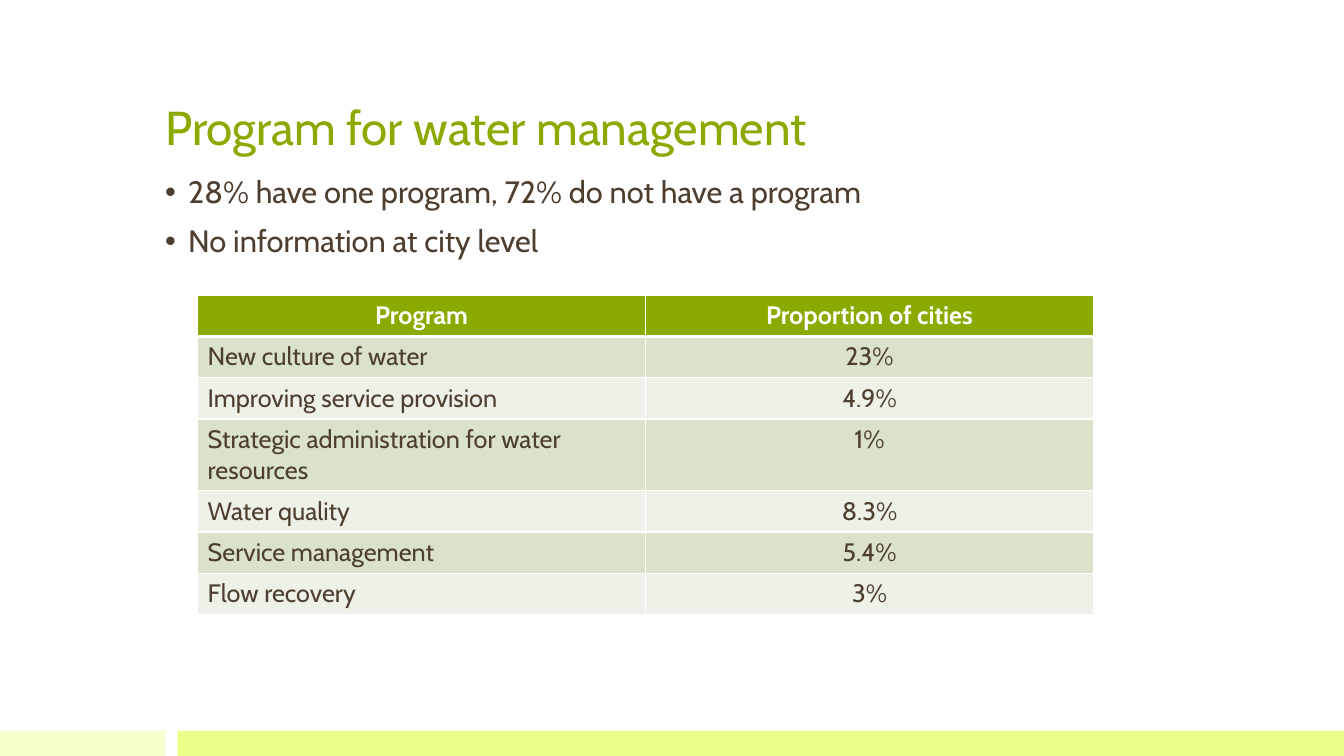
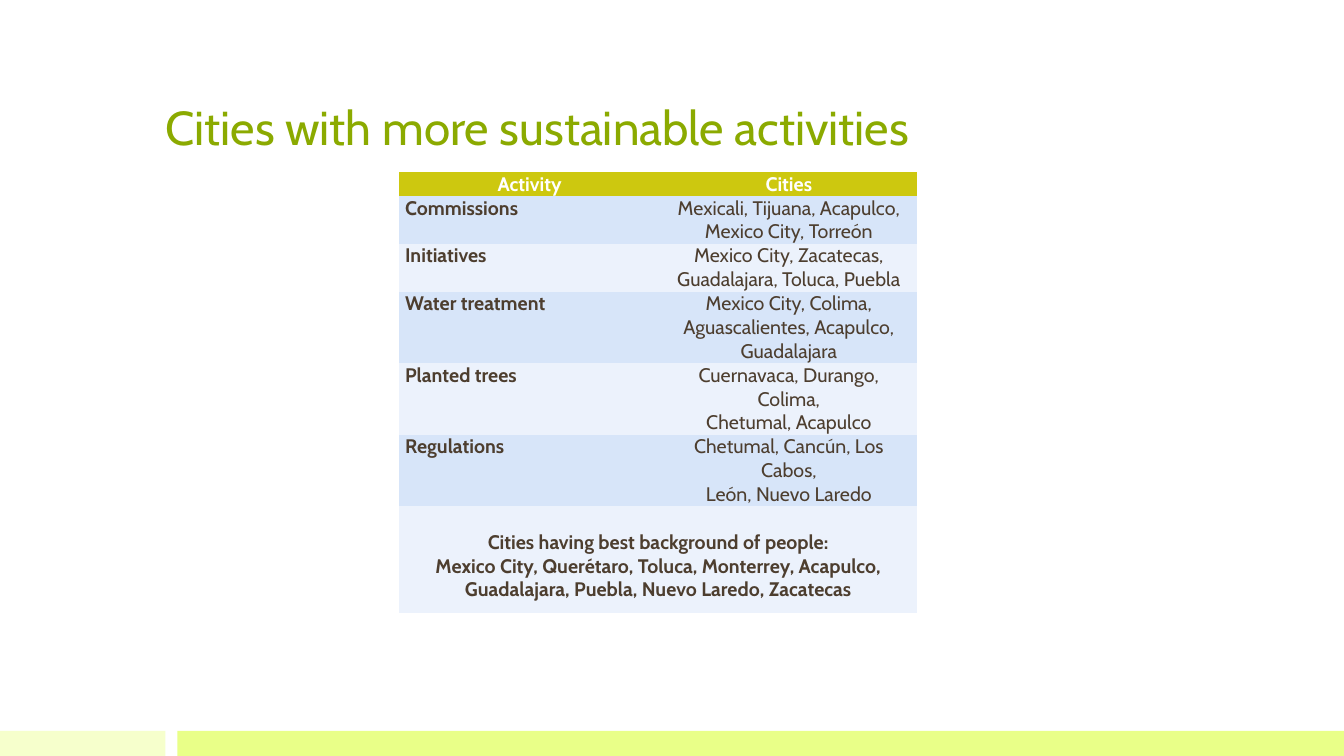
"""Build two slides on water programs and sustainable activities in cities."""
from lxml.etree import SubElement
from pptx import Presentation
from pptx.dml.color import RGBColor
from pptx.enum.shapes import MSO_SHAPE as Shape
from pptx.enum.text import MSO_ANCHOR as Anchor, PP_ALIGN as Align
from pptx.oxml.ns import qn
from pptx.util import Cm, Pt

PROGRAM_TITLE = "Program for water management"
PROGRAM_POINTS = [
    "28% have one program, 72% do not have a program",
    "No information at city level",
]
PROGRAMS = [
    ("Program", "Proportion of cities"),
    ("New culture of water", "23%"),
    ("Improving service provision", "4.9%"),
    ("Strategic administration for water resources", "1%"),
    ("Water quality", "8.3%"),
    ("Service management", "5.4%"),
    ("Flow recovery", "3%"),
]
ACTIVITY_TITLE = "Cities with more sustainable activities"
ACTIVITIES = [
    ("Activity", "Cities"),
    ("Commissions", "Mexicali, Tijuana, Acapulco, Mexico City, Torreón"),
    ("Initiatives", "Mexico City, Zacatecas, Guadalajara, Toluca, Puebla"),
    ("Water treatment", "Mexico City, Colima, Aguascalientes, Acapulco, Guadalajara"),
    ("Planted trees", "Cuernavaca, Durango, Colima,\nChetumal, Acapulco"),
    ("Regulations", "Chetumal, Cancún, Los Cabos,\nLeón, Nuevo Laredo"),
    (
        "Cities having best background of people:\n"
        "Mexico City, Querétaro, Toluca, Monterrey, Acapulco, "
        "Guadalajara, Puebla, Nuevo Laredo, Zacatecas",
    ),
]

FONT = "Cabin"
WHITE = RGBColor(0xFF, 0xFF, 0xFF)
GREEN = RGBColor(0x8B, 0xAA, 0x00)
BROWN = RGBColor(0x4D, 0x3E, 0x2F)
OLIVE = RGBColor(0xCD, 0xC8, 0x0F)
GREEN_BANDS = (RGBColor(0xDA, 0xE2, 0xCC), RGBColor(0xEE, 0xF1, 0xE7))
BLUE_BANDS = (RGBColor(0xD7, 0xE5, 0xF9), RGBColor(0xEC, 0xF2, 0xFC))
FOOTER_BANDS = [
    (0, 4.17, RGBColor(0xF6, 0xFF, 0xCC)),
    (4.47, 29.4, RGBColor(0xE9, 0xFF, 0x88)),
]

SLIDE_WIDTH, SLIDE_HEIGHT = 33.87, 19.05
FOOTER_HEIGHT = 0.63
TEXT_LEFT, TEXT_WIDTH = 3.91, 26.04
TITLE_TOP, TITLE_HEIGHT = 0.76, 3.28
CONTENT_TOP, CONTENT_HEIGHT = 4.34, 12.83
BULLET_INDENT = 0.58
TITLE_ONLY, TITLE_AND_CONTENT = 5, 1


def place(part, left, top, width, height):
    part.left, part.top = Cm(left), Cm(top)
    part.width, part.height = Cm(width), Cm(height)


def style(paragraph, size, color, bold=False, align=Align.LEFT):
    paragraph.alignment = align
    font = paragraph.font
    font.name, font.size, font.bold = FONT, Pt(size), bold
    font.color.rgb = color


def add_slide(deck, layout, heading):
    slide = deck.slides.add_slide(deck.slide_layouts[layout])
    for left, width, color in FOOTER_BANDS:
        band = slide.shapes.add_shape(
            Shape.RECTANGLE, Cm(left), Cm(SLIDE_HEIGHT - FOOTER_HEIGHT),
            Cm(width), Cm(FOOTER_HEIGHT))
        band.shadow.inherit = False
        band.fill.solid()
        band.fill.fore_color.rgb = color
        band.line.fill.background()
    title = slide.shapes.title
    place(title, TEXT_LEFT, TITLE_TOP, TEXT_WIDTH, TITLE_HEIGHT)
    title.text_frame.text = heading
    title.text_frame.vertical_anchor = Anchor.BOTTOM
    style(title.text_frame.paragraphs[0], 34, GREEN)
    return slide


def fill_bullets(body, points):
    place(body, TEXT_LEFT, CONTENT_TOP, TEXT_WIDTH, CONTENT_HEIGHT)
    body.text_frame.text = "\n".join(points)
    for paragraph in body.text_frame.paragraphs:
        style(paragraph, 22, BROWN)
        paragraph.line_spacing = 0.9
        paragraph.space_before = Pt(11)
        properties = paragraph._p.get_or_add_pPr()
        properties.set("marL", str(Cm(BULLET_INDENT)))
        properties.set("indent", str(-Cm(BULLET_INDENT)))


def set_borders(cell, widths):
    properties = cell._tc.get_or_add_tcPr()
    for side, width in zip("LRTB", widths):
        border = SubElement(properties, qn(f"a:ln{side}"), w=str(Pt(width)))
        if width:
            paint = SubElement(border, qn("a:solidFill"))
            SubElement(paint, qn("a:srgbClr"), val=str(WHITE))
        else:
            SubElement(border, qn("a:noFill"))


def add_grid(slide, rows, left, top, widths, heights, size, head, bands,
             rule=0, head_rule=0, bold_labels=False, margins=None):
    table = slide.shapes.add_table(
        len(rows), len(widths), Cm(left), Cm(top),
        Cm(sum(widths)), Cm(sum(heights))).table
    for column, width in zip(table.columns, widths):
        column.width = Cm(width)
    for r, (texts, height) in enumerate(zip(rows, heights)):
        table.rows[r].height = Cm(height)
        spans = len(texts) < len(widths)
        if spans:
            table.cell(r, 0).merge(table.cell(r, len(widths) - 1))
        for c, text in enumerate(texts):
            cell = table.cell(r, c)
            above = head_rule if r == 1 else rule
            below = head_rule if r == 0 else rule
            set_borders(cell, (rule, rule, above, below))
            cell.fill.solid()
            cell.fill.fore_color.rgb = bands[(r - 1) % 2] if r else head
            if margins:
                side, edge = margins
                cell.margin_left = cell.margin_right = Cm(side)
                cell.margin_top = cell.margin_bottom = Cm(edge)
            cell.text = text
            label = c == 0 and r > 0
            for paragraph in cell.text_frame.paragraphs:
                style(paragraph, size, BROWN if r else WHITE,
                      bold=r == 0 or (label and bold_labels),
                      align=Align.LEFT if label and not spans else Align.CENTER)
    return table


def main():
    deck = Presentation()
    deck.slide_width, deck.slide_height = Cm(SLIDE_WIDTH), Cm(SLIDE_HEIGHT)

    programs = add_slide(deck, TITLE_AND_CONTENT, PROGRAM_TITLE)
    fill_bullets(programs.placeholders[1], PROGRAM_POINTS)
    add_grid(programs, PROGRAMS, 4.98, 7.44, (11.29, 11.29),
             [1.04] * 3 + [1.8] + [1.04] * 3, 18, GREEN, GREEN_BANDS,
             rule=1, head_rule=3)

    activities = add_slide(deck, TITLE_ONLY, ACTIVITY_TITLE)
    line = 0.6
    line_counts = (1, 2, 2, 3, 3, 3, 4.5)
    grid = add_grid(activities, ACTIVITIES, 10.06, CONTENT_TOP, (6.58, 6.48),
                    [line * count for count in line_counts], 14, OLIVE,
                    BLUE_BANDS, bold_labels=True, margins=(0.15, 0))
    grid.cell(len(ACTIVITIES) - 1, 0).margin_top = Cm(line)

    deck.save("out.pptx")


if __name__ == "__main__":
    main()
